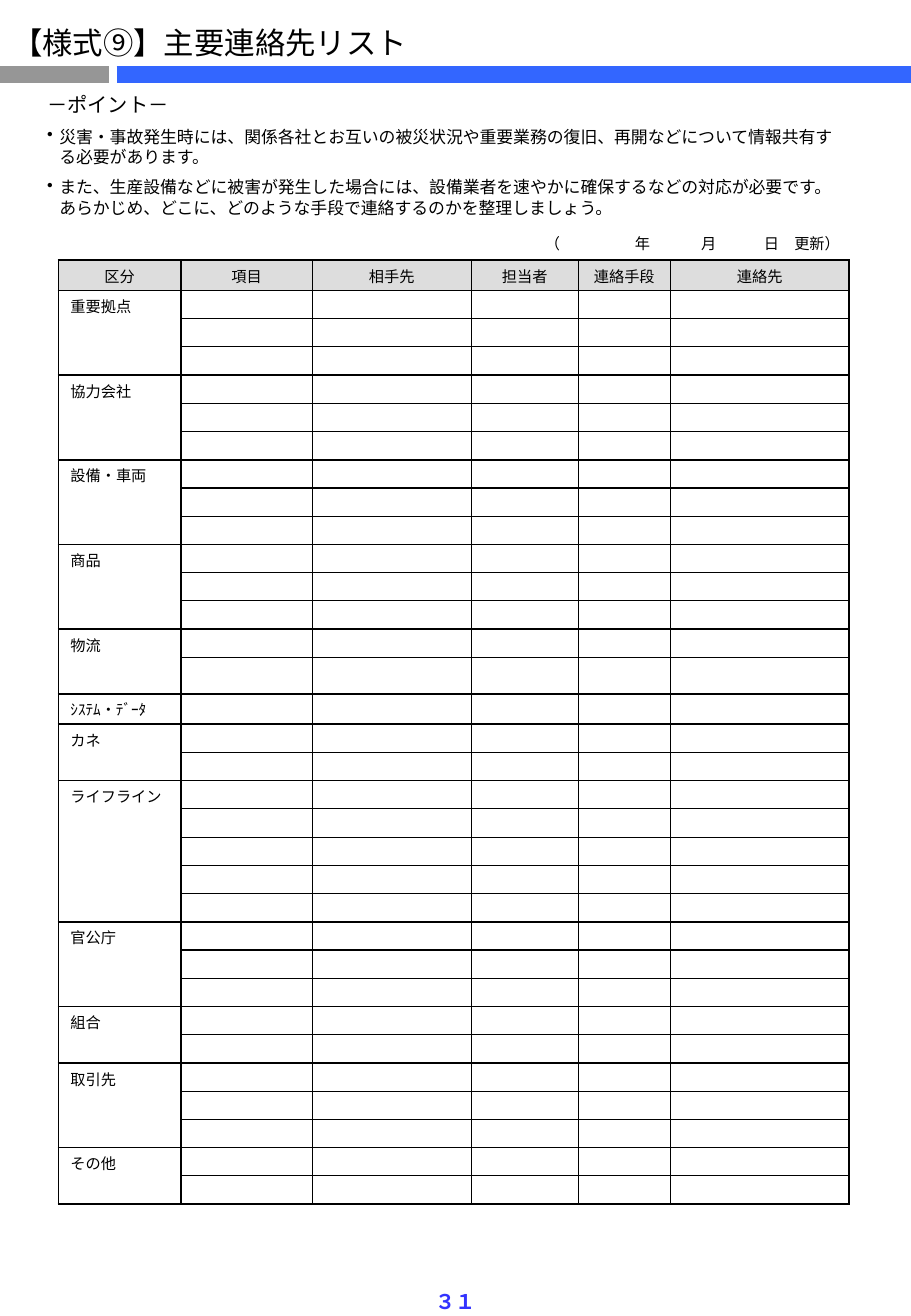
import pptx
import pptx.util
import pptx.dml.color
import pptx.enum.shapes
import pptx.enum.text
import pptx.oxml.xmlchemy

Inches = pptx.util.Inches
Pt = pptx.util.Pt
Align = pptx.enum.text.PP_ALIGN
make = pptx.oxml.xmlchemy.OxmlElement

FONT = "Noto Sans CJK JP"
HUES = {"ink": "000000", "gray": "969696", "blue": "3366FF",
        "page": "3333FF", "head": "DDDDDD"}

TITLE = "【様式⑨】主要連絡先リスト"
PAGE = "３１"
LEAD = "－ポイント－"
POINTS = [
    "災害・事故発生時には、関係各社とお互いの被災状況や重要業務の復旧、再開などについて情報共有する必要があります。",
    "また、生産設備などに被害が発生した場合には、設備業者を速やかに確保するなどの対応が必要です。"
    "あらかじめ、どこに、どのような手段で連絡するのかを整理しましょう。",
]
BARS = [(0, 0.9, "gray"), (0.96, 7.5, "blue")]
DATE = [("（", 0.39, Align.RIGHT), ("", 0.59, None), ("年", 0.18, Align.CENTER),
        ("", 0.39, None), ("月", 0.13, Align.CENTER), ("", 0.39, None),
        ("日　更新）", 0.76, Align.LEFT)]
HEADS = [("区分", 1.01), ("項目", 1.08), ("相手先", 1.31),
         ("担当者", 0.88), ("連絡手段", 0.76), ("連絡先", 1.47)]
GROUPS = [("重要拠点", 3), ("協力会社", 3), ("設備・車両", 3), ("商品", 3),
          ("物流", 2), ("ｼｽﾃﾑ・ﾃﾞｰﾀ", 1), ("カネ", 2), ("ライフライン", 5),
          ("官公庁", 3), ("組合", 2), ("取引先", 3), ("その他", 2)]
ROW = 0.23
TALL = {0: 0.25, 14: 0.3, 15: 0.25}
THICK, THIN = 1, 0.75


def color(name):
    return pptx.dml.color.RGBColor.from_string(HUES[name])


def write(para, text, size=9, lead=10, hue="ink", bold=False,
          align=None, after=0, hang=0, mark=None):
    para.alignment = align
    para.line_spacing = Pt(lead)
    para.space_before = Pt(0)
    para.space_after = Pt(after)
    props = para._p.get_or_add_pPr()
    if hang:
        props.set("marL", str(Inches(hang)))
        props.set("indent", str(Inches(-hang)))
    if mark:
        bullet = make("a:buChar")
        bullet.set("char", mark)
        props.append(bullet)
    if not text:
        para._p.get_or_add_endParaRPr().set("sz", str(size * 100))
        return
    run = para.add_run()
    run.text = text
    run.font.size = Pt(size)
    run.font.bold = bold
    run.font.name = FONT
    run.font.color.rgb = color(hue)
    east = make("a:ea")
    east.set("typeface", FONT)
    run._r.get_or_add_rPr().find(pptx.oxml.ns.qn("a:latin")).addnext(east)


def place(shape, left, top, width, height):
    shape.left, shape.top = Inches(left), Inches(top)
    shape.width, shape.height = Inches(width), Inches(height)


def add_box(slide, left, top, width, height, wrap):
    box = slide.shapes.add_textbox(*map(Inches, (left, top, width, height)))
    box.text_frame.word_wrap = wrap
    return box.text_frame


def add_grid(slide, left, top, widths, rows):
    frame = slide.shapes.add_table(
        len(rows), len(widths), Inches(left), Inches(top),
        Inches(sum(widths)), Inches(sum(rows)))
    grid = frame.table
    grid.first_row = grid.horz_banding = False
    for col, width in zip(grid.columns, widths):
        col.width = Inches(width)
    for row, height in zip(grid.rows, rows):
        row.height = Inches(height)
    for cell in grid.iter_cells():
        cell.margin_top, cell.margin_bottom = Inches(0.08), 0
        cell.fill.background()
    return grid


def border(cell, **sides):
    props = cell._tc.get_or_add_tcPr()
    for spot, (side, width) in enumerate(sides.items()):
        line = make("a:ln" + side)
        line.set("w", str(Pt(width)))
        fill = make("a:solidFill")
        ink = make("a:srgbClr")
        ink.set("val", HUES["ink"])
        fill.append(ink)
        line.append(fill)
        props.insert(spot, line)


def add_date(slide):
    grid = add_grid(slide, 4.22, 1.87, [part[1] for part in DATE], [ROW])
    for cell, (text, width, align) in zip(grid.iter_cells(), DATE):
        cell.margin_left = cell.margin_right = 0
        write(cell.text_frame.paragraphs[0], text, align=align)


def add_list(slide):
    count = 1 + sum(size for name, size in GROUPS)
    rows = [TALL.get(row, ROW) for row in range(count)]
    grid = add_grid(slide, 0.48, 2.14, [head[1] for head in HEADS], rows)
    texts = {(0, col): head[0] for col, head in enumerate(HEADS)}
    edges = {(row, col): THIN for row in range(count) for col in range(len(HEADS))}
    start = 1
    for name, size in GROUPS:
        texts[start, 0] = name
        for col in range(len(HEADS)):
            edges[start - 1, col] = edges[start + size - 1, col] = THICK
            if name == "組合":
                edges[start, col] = 0.5
        edges[start, 0] = THICK
        if size > 1:
            grid.cell(start, 0).merge(grid.cell(start + size - 1, 0))
        start += size
    for col in (1, 2, 3):
        edges[1, col] = THICK
    last = len(HEADS) - 1
    for (row, col), edge in edges.items():
        cell = grid.cell(row, col)
        border(cell, L=THICK if col == 0 else THIN,
               R=THICK if col == last else THIN,
               T=edges.get((row - 1, col), THICK), B=edge)
        if row == 0:
            cell.fill.solid()
            cell.fill.fore_color.rgb = color("head")
        write(cell.text_frame.paragraphs[0], texts.get((row, col), ""),
              align=Align.CENTER if row == 0 else Align.LEFT)


def main():
    deck = pptx.Presentation()
    deck.slide_width, deck.slide_height = Inches(7.5), Inches(10.83)
    slide = deck.slides.add_slide(deck.slide_layouts[5])

    for left, right, hue in BARS:
        bar = slide.shapes.add_connector(
            pptx.enum.shapes.MSO_CONNECTOR.STRAIGHT,
            Inches(left), Inches(0.61), Inches(right), Inches(0.61))
        bar.line.width = Pt(10)
        bar.line.color.rgb = color(hue)
        bar._element.spPr.append(make("a:effectLst"))

    title = slide.shapes.title
    place(title, 0, 0.14, 3.48, 0.4)
    title.text_frame.word_wrap = False
    title.text_frame.auto_size = pptx.enum.text.MSO_AUTO_SIZE.NONE
    title.text_frame.vertical_anchor = pptx.enum.text.MSO_ANCHOR.TOP
    write(title.text_frame.paragraphs[0], TITLE, size=18, lead=22, align=Align.LEFT)

    add_list(slide)
    page = add_box(slide, 3.48, 10.55, 0.54, 0.31, False)
    write(page.paragraphs[0], PAGE, size=12, lead=15, hue="page",
          bold=True, align=Align.CENTER)

    body = add_box(slide, 0.29, 0.7, 6.77, 1.14, True)
    write(body.paragraphs[0], LEAD, size=12, lead=15, after=6, hang=0.1)
    for point in POINTS:
        write(body.add_paragraph(), point, size=10, lead=12, after=6,
              hang=0.1, mark="•")
    add_date(slide)
    deck.save("out.pptx")


if __name__ == "__main__":
    main()
